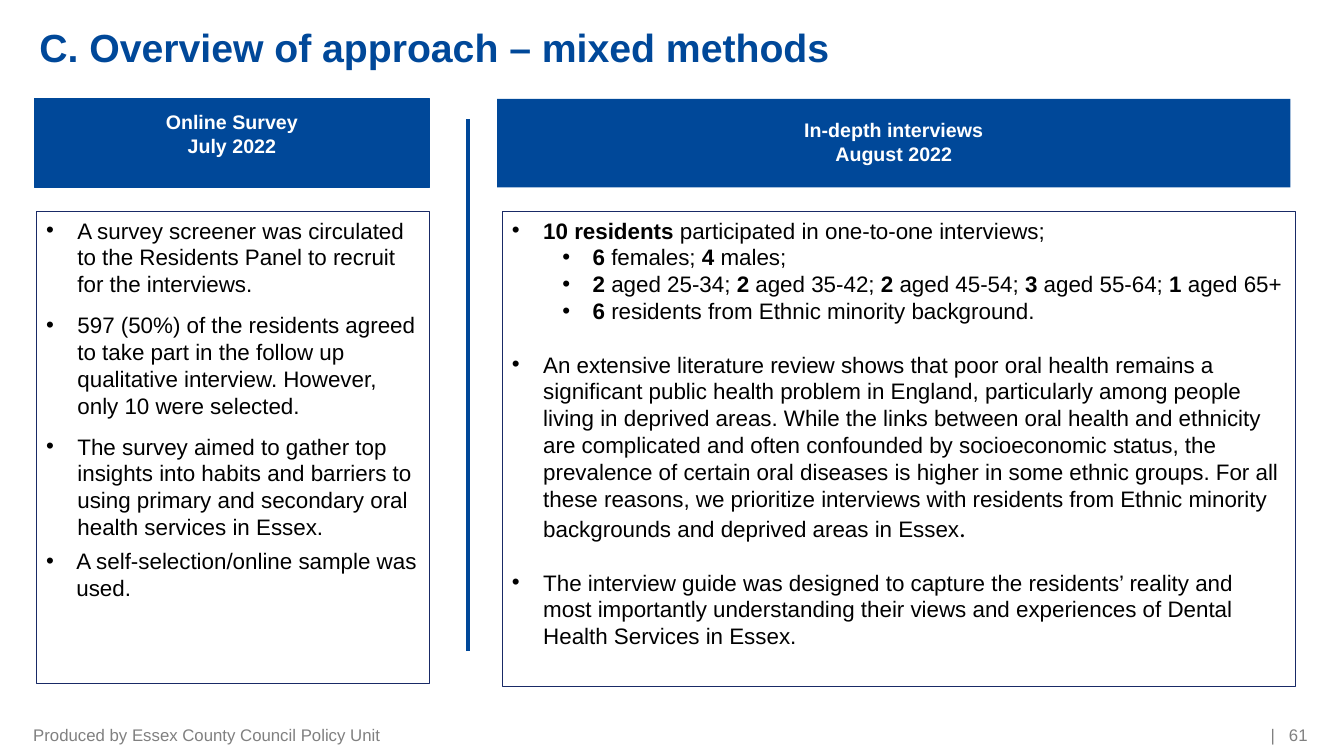
from lxml import etree
from pptx import Presentation
from pptx.dml.color import RGBColor
from pptx.enum.shapes import MSO_CONNECTOR, MSO_SHAPE
from pptx.enum.text import MSO_ANCHOR, MSO_AUTO_SIZE, PP_ALIGN
from pptx.oxml.ns import qn
from pptx.util import Inches, Pt

RECT = MSO_SHAPE.RECTANGLE
STRAIGHT = MSO_CONNECTOR.STRAIGHT
TOP, MIDDLE, BOTTOM = MSO_ANCHOR.TOP, MSO_ANCHOR.MIDDLE, MSO_ANCHOR.BOTTOM
LEFT, CENTER, RIGHT = PP_ALIGN.LEFT, PP_ALIGN.CENTER, PP_ALIGN.RIGHT
NO_FIT = MSO_AUTO_SIZE.NONE

COLORS = {"blue": "004899", "navy": "192A66", "black": "000000",
          "white": "FFFFFF", "grey": "808080"}
FONT = "Arial"
HEADER_TOP, HEADER_HEIGHT, PANEL_TOP = 0.98, 0.88, 2.1

SURVEY_POINTS = [
    ("A survey screener was circulated to the Residents Panel to recruit "
     "for the interviews.", 0.31, 0.31, 0),
    ("597 (50%) of the residents agreed to take part in the follow up "
     "qualitative interview. However, only 10 were selected.", 0.31, 0.31, 10),
    ("The survey aimed to gather top insights into habits and barriers to "
     "using primary and secondary oral health services in Essex.", 0.31, 0.31, 10),
    ("A self-selection/online sample was used.", 0.3, 0.3, 5),
]
INTERVIEW_POINTS = [
    ("*10 residents *participated in one-to-one interviews;", 0.31, 0.31, 0),
    ("*6* females; *4* males;", 0.8, 0.3, 0),
    ("*2* aged 25-34; *2* aged 35-42; *2 *aged 45-54; *3* aged 55-64; "
     "*1 *aged 65+", 0.8, 0.3, 0),
    ("*6* residents from Ethnic minority background.", 0.8, 0.3, 0),
    ("An extensive literature review shows that poor oral health remains a "
     "significant public health problem in England, particularly among people "
     "living in deprived areas. While the links between oral health and "
     "ethnicity are complicated and often confounded by socioeconomic status, "
     "the prevalence of certain oral diseases is higher in some ethnic groups. "
     "For all these reasons, we prioritize interviews with residents from "
     "Ethnic minority backgrounds and deprived areas in Essex", 0.31, 0.31, 19),
    ("The interview guide was designed to capture the residents’ reality and "
     "most importantly understanding their views and experiences of Dental "
     "Health Services in Essex.", 0.31, 0.31, 19),
]


def rgb(name):
    return RGBColor.from_string(COLORS[name])


def add_run(p, text, size, color, bold=False, font=FONT):
    r = p.add_run()
    r.text = text
    r.font.name = font
    r.font.size = Pt(size)
    r.font.bold = bold
    r.font.color.rgb = rgb(color)


def set_frame(tf, anchor, left=0.1, top=0.05, right=0.1, bottom=0.05):
    tf.word_wrap = True
    tf.auto_size = NO_FIT
    tf.vertical_anchor = anchor
    tf.margin_left, tf.margin_top = Inches(left), Inches(top)
    tf.margin_right, tf.margin_bottom = Inches(right), Inches(bottom)


def set_bullet(p, indent, hanging):
    pPr = p._p.get_or_add_pPr()
    pPr.set("marL", str(Inches(indent)))
    pPr.set("indent", str(-Inches(hanging)))
    etree.SubElement(pPr, qn("a:buFont")).set("typeface", FONT)
    etree.SubElement(pPr, qn("a:buChar")).set("char", "•")


def add_title(s, text):
    title = s.shapes.title
    title.left, title.top = Inches(0.29), Inches(0.11)
    title.width, title.height = Inches(8.29), Inches(0.59)
    set_frame(title.text_frame, BOTTOM, bottom=0)
    p = title.text_frame.paragraphs[0]
    p.alignment = LEFT
    add_run(p, text, 28, "blue", True)


def add_box(s, left, top, width, height):
    sp = s.shapes.add_shape(RECT, Inches(left), Inches(top),
                            Inches(width), Inches(height))
    sp.shadow.inherit = False
    return sp


def add_header(s, left, width, lines, bottom, outlined):
    sp = add_box(s, left, HEADER_TOP, width, HEADER_HEIGHT)
    sp.fill.solid()
    sp.fill.fore_color.rgb = rgb("blue")
    if outlined:
        sp.line.color.rgb = rgb("blue")
        sp.line.width = Pt(1)
    else:
        sp.line.fill.background()
    tf = sp.text_frame
    set_frame(tf, MIDDLE, bottom=bottom)
    for i, line in enumerate(lines):
        p = tf.add_paragraph() if i else tf.paragraphs[0]
        p.alignment = CENTER
        add_run(p, line, 14, "white", True)


def add_panel(s, left, width, height, points):
    sp = add_box(s, left, PANEL_TOP, width, height)
    sp.fill.background()
    sp.line.color.rgb = rgb("navy")
    sp.line.width = Pt(0.75)
    tf = sp.text_frame
    set_frame(tf, TOP)
    for i, (text, indent, hanging, before) in enumerate(points):
        p = tf.add_paragraph() if i else tf.paragraphs[0]
        set_bullet(p, indent, hanging)
        p.alignment = LEFT
        p.space_before = Pt(before)
        for j, part in enumerate(text.split("*")):
            if part:
                add_run(p, part, 16, "black", j % 2 == 1)
    return tf


def add_divider(s, x, top, bottom):
    line = s.shapes.add_connector(STRAIGHT, Inches(x), Inches(bottom),
                                  Inches(x), Inches(top))
    line.line.color.rgb = rgb("blue")
    line.line.width = Pt(3)
    etree.SubElement(line._element.spPr, qn("a:effectLst"))


def add_footer(s, left, width, text, align, margins):
    tb = s.shapes.add_textbox(Inches(left), Inches(7.21),
                              Inches(width), Inches(0.15))
    set_frame(tb.text_frame, MIDDLE, **margins)
    p = tb.text_frame.paragraphs[0]
    p.alignment = align
    add_run(p, text, 12, "grey")


def main():
    prs = Presentation()
    prs.slide_width, prs.slide_height = Inches(13.33), Inches(7.5)
    s = prs.slides.add_slide(prs.slide_layouts.get_by_name("Title Only"))
    add_title(s, "C. Overview of approach – mixed methods")
    add_header(s, 0.34, 3.92, ["Online Survey", "July 2022"], 0.24, True)
    add_panel(s, 0.36, 3.9, 4.68, SURVEY_POINTS)
    add_header(s, 4.93, 7.87, ["In-depth interviews", "August 2022"], 0.08, False)
    tf = add_panel(s, 4.98, 7.87, 4.71, INTERVIEW_POINTS)
    add_run(tf.paragraphs[4], ".", 18, "black", font="Calibri")
    add_divider(s, 4.64, 1.18, 6.46)
    add_footer(s, 12.12, 0.85, "|   61", RIGHT, {"right": 0})
    add_footer(s, 0.33, 6.3, "Produced by Essex County Council Policy Unit",
               LEFT, {"left": 0})
    prs.save("out.pptx")


if __name__ == "__main__":
    main()
